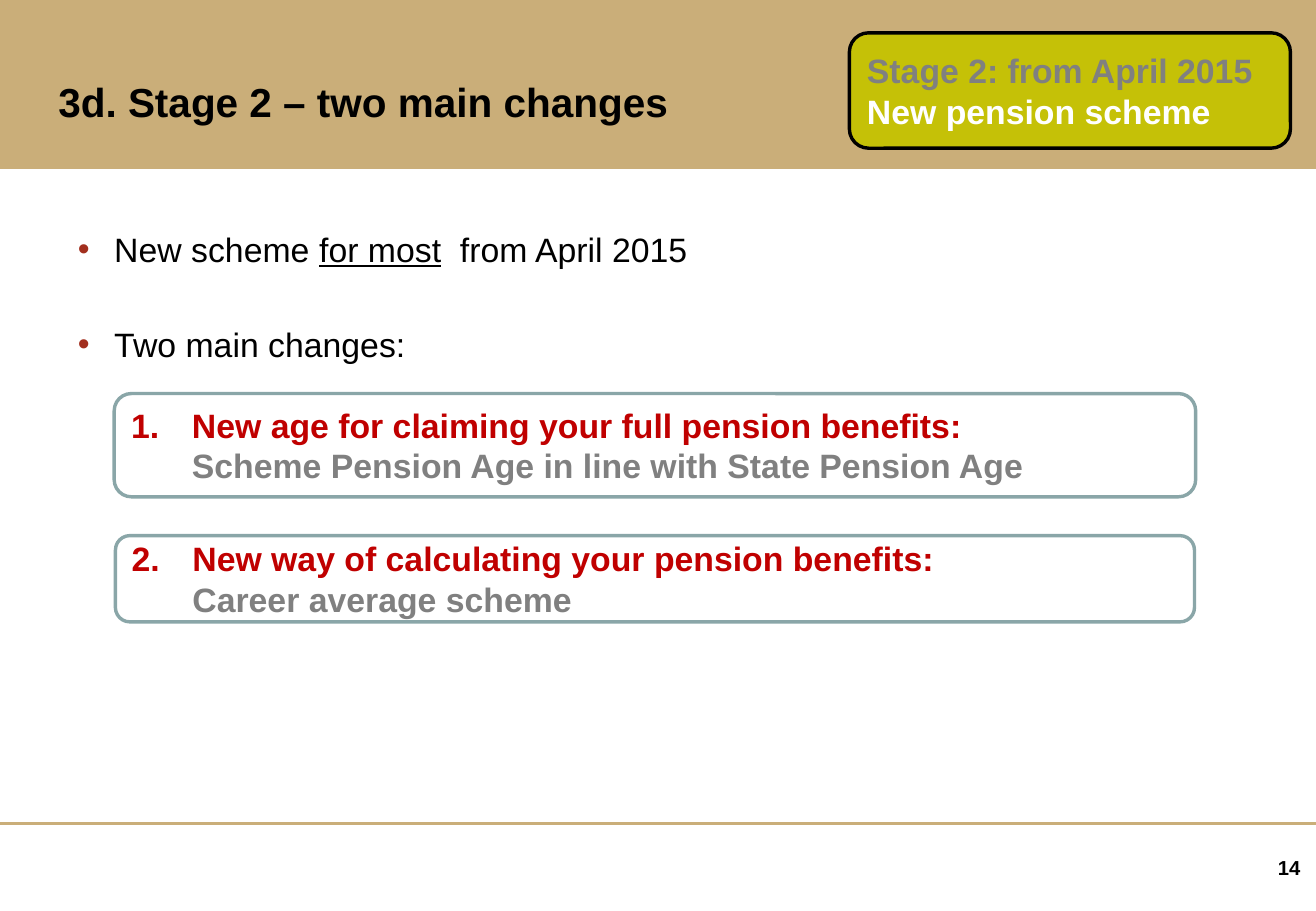
from lxml.etree import SubElement
from pptx import Presentation
from pptx.dml.color import RGBColor
from pptx.enum.shapes import MSO_CONNECTOR, MSO_SHAPE
from pptx.enum.text import MSO_ANCHOR, MSO_AUTO_SIZE, PP_ALIGN
from pptx.oxml.ns import qn
from pptx.util import Inches, Pt

COLOURS = {
    "sand": "CAAE79",
    "olive": "C5C107",
    "teal": "8AA6A8",
    "crimson": "C00000",
    "bullet": "A22F1E",
    "grey": "808080",
    "black": "000000",
    "white": "FFFFFF",
}
SLIDE_WIDTH = 10.83


def colour(name):
    return RGBColor.from_string(COLOURS[name])


def add_text(paragraph, text, size=20, ink="black", bold=False, underline=False):
    run = paragraph.add_run()
    run.text = text
    run.font.name = "Arial"
    run.font.size = Pt(size)
    run.font.bold = bold
    run.font.underline = underline
    run.font.color.rgb = colour(ink)


def place(part, left, top, width, height):
    part.left, part.top = Inches(left), Inches(top)
    part.width, part.height = Inches(width), Inches(height)


def set_frame(frame, anchor=MSO_ANCHOR.MIDDLE):
    frame.word_wrap = True
    frame.auto_size = MSO_AUTO_SIZE.NONE
    frame.vertical_anchor = anchor
    return frame


def set_indent(paragraph, margin, first):
    properties = paragraph._p.get_or_add_pPr()
    properties.set("marL", str(Inches(margin)))
    properties.set("indent", str(Inches(first)))
    return properties


def add_panel(slide, kind, area, line, weight, fill=None):
    panel = slide.shapes.add_shape(kind, *map(Inches, area))
    panel.shadow.inherit = False
    panel.line.color.rgb = colour(line)
    panel.line.width = Pt(weight)
    if fill:
        panel.fill.solid()
        panel.fill.fore_color.rgb = colour(fill)
    else:
        panel.fill.background()
    return panel


def add_panel_lines(panel, lines):
    frame = set_frame(panel.text_frame)
    for index, (text, ink) in enumerate(lines):
        paragraph = frame.add_paragraph() if index else frame.paragraphs[0]
        paragraph.alignment = PP_ALIGN.LEFT
        add_text(paragraph, text, ink=ink, bold=True)
    return frame.paragraphs


def add_numbered_change(slide, number, area, heading, detail):
    panel = add_panel(slide, MSO_SHAPE.ROUNDED_RECTANGLE, area, "teal", 2)
    heading_line, detail_line = add_panel_lines(
        panel, [(heading, "crimson"), (detail, "grey")]
    )
    numbering = SubElement(set_indent(heading_line, 0.5, -0.5), qn("a:buAutoNum"))
    numbering.set("type", "arabicPeriod")
    numbering.set("startAt", str(number))
    set_indent(detail_line, 0.5, 0)


def add_header(slide):
    title = slide.shapes.title
    band = add_panel(slide, MSO_SHAPE.RECTANGLE, (0, 0, SLIDE_WIDTH, 1.39), "sand", 0.75, "sand")
    title.element.addprevious(band.element)
    place(title, 0.38, 0.28, 9.75, 1.1)
    heading = set_frame(title.text_frame).paragraphs[0]
    heading.alignment = PP_ALIGN.LEFT
    add_text(heading, "3d. Stage 2 – two main changes", size=24, bold=True)

    stage = add_panel(
        slide, MSO_SHAPE.ROUNDED_RECTANGLE, (6.99, 0.27, 3.63, 0.95), "black", 2, "olive"
    )
    add_panel_lines(
        stage, [("Stage 2: from April 2015", "grey"), ("New pension scheme", "white")]
    )


def add_bullets(slide, bullets):
    body = slide.placeholders[1]
    place(body, 0.54, 1.83, 8.85, 5.31)
    frame = set_frame(body.text_frame, MSO_ANCHOR.TOP)
    for index, runs in enumerate(bullets):
        paragraph = frame.add_paragraph() if index else frame.paragraphs[0]
        paragraph.space_before = Pt(32.7 if index else 0)
        properties = set_indent(paragraph, 0.3, -0.3)
        bullet_colour = SubElement(properties, qn("a:buClr"))
        SubElement(bullet_colour, qn("a:srgbClr")).set("val", COLOURS["bullet"])
        SubElement(properties, qn("a:buFont")).set("typeface", "Arial")
        SubElement(properties, qn("a:buChar")).set("char", "•")
        for text, underline in runs:
            add_text(paragraph, text, underline=underline)


def add_footer(slide):
    rule = slide.shapes.add_connector(
        MSO_CONNECTOR.STRAIGHT, 0, Inches(6.78), Inches(SLIDE_WIDTH), Inches(6.78)
    )
    rule.line.color.rgb = colour("sand")
    rule.line.width = Pt(2.25)
    SubElement(rule.element.spPr, qn("a:effectLst"))

    page_number = slide.shapes.add_textbox(*map(Inches, (6.98, 6.89, 3.82, 0.5)))
    paragraph = set_frame(page_number.text_frame).paragraphs[0]
    paragraph.alignment = PP_ALIGN.RIGHT
    add_text(paragraph, "14", size=12, bold=True)


def main():
    presentation = Presentation()
    presentation.slide_width = Inches(SLIDE_WIDTH)
    presentation.slide_height = Inches(7.5)
    slide = presentation.slides.add_slide(presentation.slide_layouts[1])
    add_header(slide)
    add_bullets(slide, [
        [("New scheme ", False), ("for most", True), ("  from April 2015", False)],
        [("Two main changes:", False)],
    ])
    changes = [
        ((0.94, 3.24, 8.9, 0.85), "New age for claiming your full pension benefits:",
         "Scheme Pension Age in line with State Pension Age"),
        ((0.95, 4.41, 8.88, 0.71), "New way of calculating your pension benefits:",
         "Career average scheme"),
    ]
    for number, (area, heading, detail) in enumerate(changes, start=1):
        add_numbered_change(slide, number, area, heading, detail)
    add_footer(slide)
    presentation.save("out.pptx")


if __name__ == "__main__":
    main()
